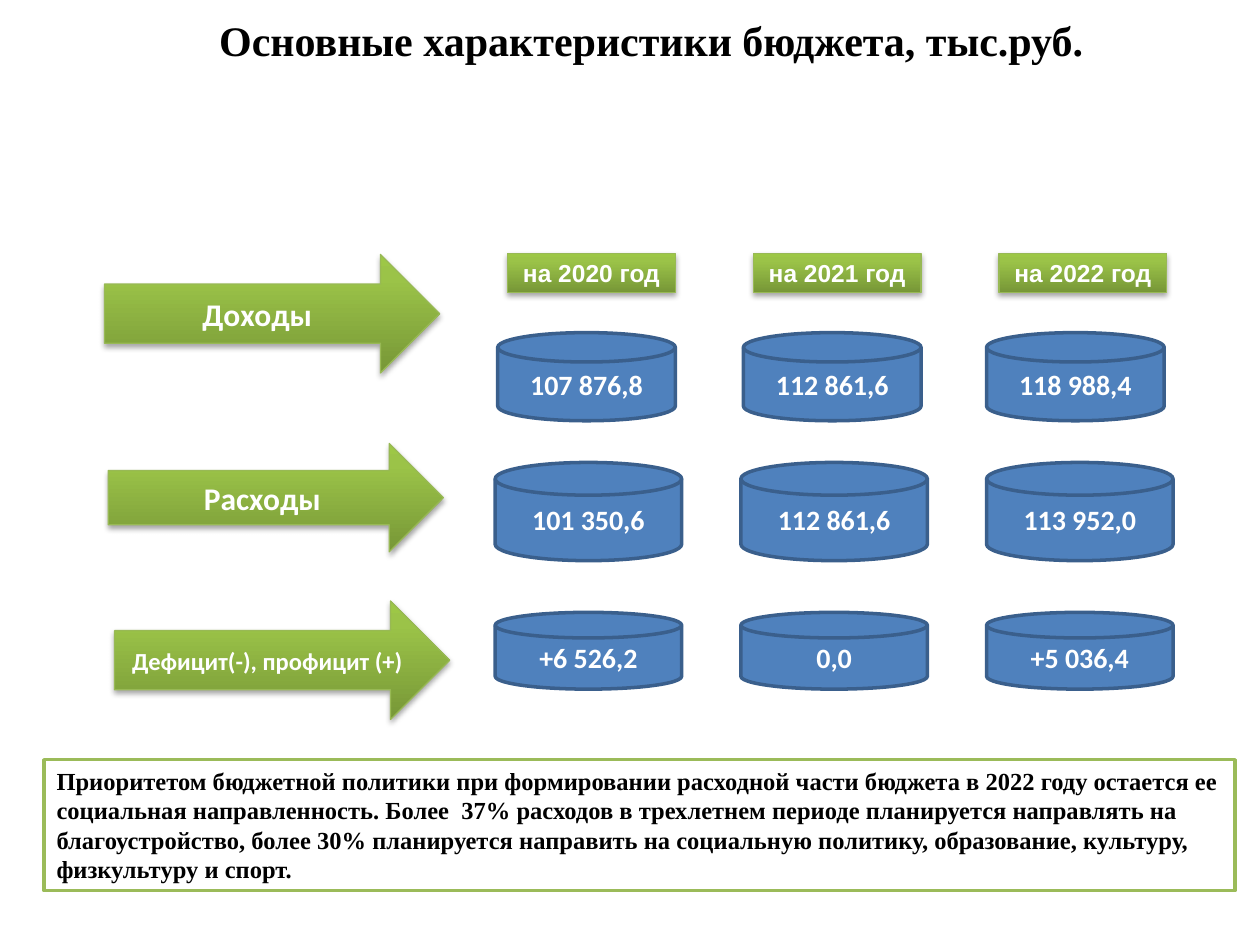
from lxml import etree
from pptx import Presentation
from pptx.dml.color import RGBColor
from pptx.enum.shapes import MSO_SHAPE
from pptx.enum.text import MSO_ANCHOR, PP_ALIGN
from pptx.oxml.ns import qn
from pptx.util import Emu, Pt

PX = 9144
ARROW = MSO_SHAPE.RIGHT_ARROW
DISK = MSO_SHAPE.FLOWCHART_MAGNETIC_DISK
RECT = MSO_SHAPE.RECTANGLE
LEFT, CENTER = PP_ALIGN.LEFT, PP_ALIGN.CENTER
TOP, MIDDLE = MSO_ANCHOR.TOP, MSO_ANCHOR.MIDDLE

WHITE = RGBColor(0xFF, 0xFF, 0xFF)
BLACK = RGBColor(0x00, 0x00, 0x00)
BLUE = RGBColor(0x4F, 0x81, 0xBD)
NAVY = RGBColor(0x3A, 0x5F, 0x8C)
GREEN = RGBColor(0x9B, 0xBB, 0x59)
EDGE = RGBColor(0x98, 0xB9, 0x55)
DARK = RGBColor(0x77, 0x97, 0x37)
MID = RGBColor(0x9B, 0xC3, 0x48)
LIGHT = RGBColor(0x9D, 0xC7, 0x46)
STOPS = ((0, DARK), (80000, MID), (100000, LIGHT))

SERIF, SANS, BODY = "Times New Roman", "Arial", "Calibri"
STEP = 195
TITLE = "Основные характеристики бюджета, тыс.руб."
NOTE = (
    "Приоритетом бюджетной политики при формировании расходной части бюджета "
    "в 2022 году остается ее социальная направленность. Более  37% расходов "
    "в трехлетнем периоде планируется направлять на благоустройство, более 30% "
    "планируется направить на социальную политику, образование, культуру, "
    "физкультуру и спорт."
)
YEARS = ("на 2020 год", "на 2021 год", "на 2022 год")
ARROWS = (
    ((83, 202, 266, 94), "Доходы", 18),
    ((86, 352, 266, 86), "Расходы", 18),
    ((91, 477, 266, 94), "Дефицит(-), профицит (+)", 14),
)
ROWS = (
    ((395, 264, 141, 70), (0, 195, 388), ("107 876,8", "112 861,6", "118 988,4")),
    ((393, 367, 148, 78), (0, 195, 390), ("101 350,6", "112 861,6", "113 952,0")),
    ((393, 486, 148, 61), (0, 195, 390), ("+6 526,2", "0,0", "+5 036,4")),
)


def scale(box):
    """Turn a box in px into EMU lengths."""
    return [Emu(n * PX) for n in box]


def write(shape, text, size, font, color=WHITE, align=CENTER, anchor=MIDDLE):
    """Put one bold paragraph into a shape."""
    frame = shape.text_frame
    frame.word_wrap = True
    frame.vertical_anchor = anchor
    frame.text = text
    para = frame.paragraphs[0]
    para.alignment = align
    face = para.runs[0].font
    face.size, face.name, face.bold = Pt(size), font, True
    face.color.rgb = color


def draw(slide, kind, box, line, width):
    """Add a preset shape with an outline and no shadow."""
    shape = slide.shapes.add_shape(kind, *scale(box))
    shape.shadow.inherit = False
    shape.line.color.rgb = line
    shape.line.width = Pt(width)
    return shape


def flat(slide, kind, box, fill, line):
    """Add a shape with one plain fill."""
    shape = draw(slide, kind, box, line, 2)
    shape.fill.solid()
    shape.fill.fore_color.rgb = fill
    return shape


def glossy(slide, kind, box):
    """Add a shape with a green gradient and a soft shadow."""
    shape = draw(slide, kind, box, EDGE, 0.75)
    shape.fill.gradient()
    shape.fill.gradient_angle = 90
    props = shape._element.spPr
    stops = props.find(".//" + qn("a:gsLst"))
    for stop in list(stops):
        stops.remove(stop)
    for pos, color in STOPS:
        stop = etree.SubElement(stops, qn("a:gs"), pos=str(pos))
        etree.SubElement(stop, qn("a:srgbClr"), val=str(color))
    shade = etree.SubElement(
        props.find(qn("a:effectLst")), qn("a:outerShdw"),
        blurRad="40000", dist="23000", dir="5400000", rotWithShape="0",
    )
    tint = etree.SubElement(shade, qn("a:srgbClr"), val=str(BLACK))
    etree.SubElement(tint, qn("a:alpha"), val="35000")
    return shape


def add_title(slide, box):
    """Add the heading."""
    write(slide.shapes.add_textbox(*scale(box)), TITLE, 24, SERIF, BLACK)


def add_arrow(slide, box, text, size):
    """Add the arrow that names a row."""
    write(glossy(slide, ARROW, box), text, size, BODY)


def add_years(slide, box):
    """Add the year labels from the first box rightwards."""
    left, top, width, height = box
    for i, year in enumerate(YEARS):
        label = glossy(slide, RECT, (left + i * STEP, top, width, height))
        write(label, year, 14, SANS)


def add_disks(slide, box, shifts, values):
    """Add a row of value disks from the first box rightwards."""
    left, top, width, height = box
    for shift, value in zip(shifts, values):
        disk = flat(slide, DISK, (left + shift, top, width, height), BLUE, NAVY)
        write(disk, value, 16, BODY)


def add_note(slide, box):
    """Add the framed note."""
    note = flat(slide, RECT, box, WHITE, GREEN)
    write(note, NOTE, 14, SERIF, BLACK, LEFT, TOP)


def main():
    """Build and save the slide."""
    deck = Presentation()
    deck.slide_width, deck.slide_height = scale((1000, 750))
    slide = deck.slides.add_slide(deck.slide_layouts[6])
    for arrow in ARROWS:
        add_arrow(slide, *arrow)
    add_note(slide, (35, 603, 945, 104))
    add_title(slide, (67, 0, 900, 63))
    add_years(slide, (403, 201, 133, 31))
    for row in ROWS:
        add_disks(slide, *row)
    deck.save("out.pptx")


if __name__ == "__main__":
    main()
